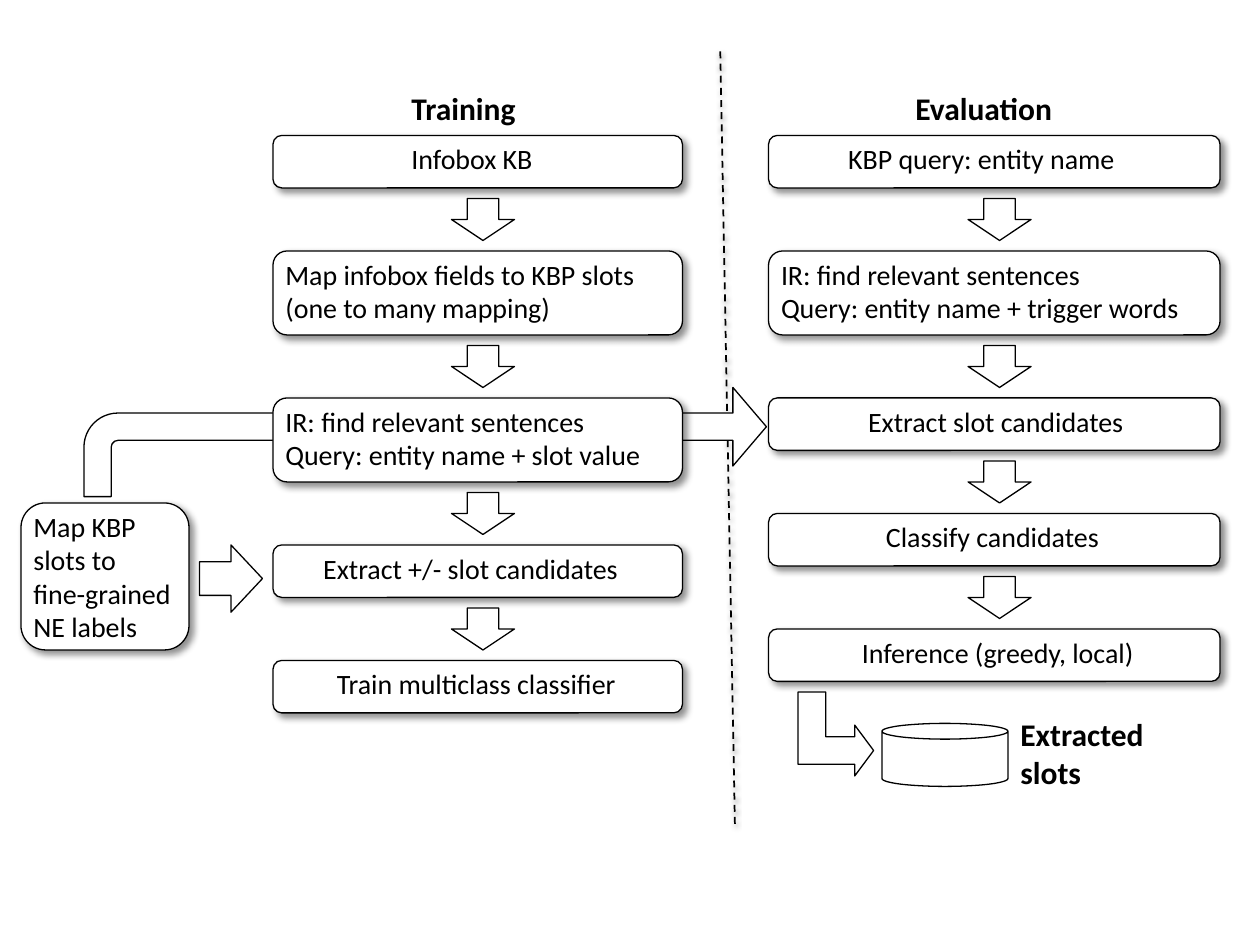
import pptx
import pptx.util
import pptx.dml.color
import pptx.enum.dml
import pptx.enum.shapes
import pptx.enum.text
import pptx.oxml
import pptx.oxml.ns

SHAPE = pptx.enum.shapes.MSO_SHAPE
WHITE = pptx.dml.color.RGBColor(0xFF, 0xFF, 0xFF)
BLACK = pptx.dml.color.RGBColor(0, 0, 0)
FONT = "Calibri"

UNITS_PER_INCH = 12
COLUMN_TOP = 12.9
HEADING_RISE = 5
ARROW_WIDTH, ARROW_HEIGHT = 6, 4
ARROW_GAP = 1
STEP_GAP = ARROW_HEIGHT + 2 * ARROW_GAP
SINGLE, DOUBLE = 5, 8

TRAINING_STEPS = [
    (["Infobox KB"], 12, 15.6),
    (["Map infobox fields to KBP slots", "(one to many mapping)"], 0, 39.5),
    (["IR: find relevant sentences", "Query: entity name + slot value"], 0, 39.6),
    (["Extract +/- slot candidates"], 3.6, 30.8),
    (["Train multiclass classifier"], 4.9, 32.3),
]
EVALUATION_STEPS = [
    (["KBP query: entity name"], 6.4, 30.7),
    (["IR: find relevant sentences", "Query: entity name + trigger words"], 0, 43.8),
    (["Extract slot candidates"], 8.3, 27),
    (["Classify candidates"], 10, 25.7),
    (["Inference (greedy, local)"], 7.7, 31.2),
]


def units(*values):
    return [pptx.util.Inches(value / UNITS_PER_INCH) for value in values]


def add_shadow(shape, opacity, blur, distance, angle):
    namespace = pptx.oxml.ns.nsdecls("a")
    effects = pptx.oxml.parse_xml(
        f'<a:effectLst {namespace}><a:outerShdw blurRad="{pptx.util.Pt(blur)}" '
        f'dist="{pptx.util.Pt(distance)}" dir="{angle * 60000}" rotWithShape="0">'
        f'<a:srgbClr val="{BLACK}"><a:alpha val="{opacity * 1000}"/></a:srgbClr>'
        "</a:outerShdw></a:effectLst>")
    shape._element.spPr.append(effects)


def add_outline(page, kind, box, adjustments=()):
    shape = page.shapes.add_shape(kind, *units(*box))
    shape.fill.solid()
    shape.fill.fore_color.rgb = WHITE
    shape.line.color.rgb = BLACK
    shape.line.width = pptx.util.Pt(0.75)
    for index, value in enumerate(adjustments):
        shape.adjustments[index] = value
    if kind == SHAPE.ROUNDED_RECTANGLE:
        add_shadow(shape, 43, 4, 3, 45)
    else:
        shape.shadow.inherit = False
    return shape


def add_label(page, left, top, width, lines, size=16, bold=False):
    height = 1.2 + len(lines) * size * 0.2
    frame = page.shapes.add_textbox(*units(left, top, width, height)).text_frame
    frame.word_wrap = False
    frame.auto_size = pptx.enum.text.MSO_AUTO_SIZE.SHAPE_TO_FIT_TEXT
    frame.text = "\n".join(lines)
    for para in frame.paragraphs:
        para.font.name = FONT
        para.font.size = pptx.util.Pt(size)
        para.font.bold = bold
        para.font.color.rgb = BLACK


def add_divider(page, start, end):
    divider = page.shapes.add_connector(
        pptx.enum.shapes.MSO_CONNECTOR.STRAIGHT, *units(*start, *end))
    divider.line.color.rgb = BLACK
    divider.line.width = pptx.util.Pt(1)
    divider.line.dash_style = pptx.enum.dml.MSO_LINE.DASH
    add_shadow(divider, 38, 3.1, 1.6, 90)


def add_step_column(page, left, width, heading, heading_indent, heading_width,
                    arrow_indent, steps):
    add_label(page, left + heading_indent, COLUMN_TOP - HEADING_RISE, heading_width,
              [heading], 18, True)
    top = COLUMN_TOP
    for number, (lines, indent, label_width) in enumerate(steps):
        if number:
            add_outline(page, SHAPE.DOWN_ARROW,
                        (left + arrow_indent, top - STEP_GAP + ARROW_GAP,
                         ARROW_WIDTH, ARROW_HEIGHT))
        height = SINGLE if len(lines) == 1 else DOUBLE
        add_outline(page, SHAPE.ROUNDED_RECTANGLE, (left, top, width, height))
        add_label(page, left + indent, top, label_width, lines)
        top += height + STEP_GAP


def add_label_mapping(page, left, top, width, height):
    add_outline(page, SHAPE.ROUNDED_RECTANGLE, (left, top, width, height))
    add_label(page, left, top, width + 0.7,
              ["Map KBP", "slots to", "fine-grained", "NE labels"])
    add_outline(page, SHAPE.RIGHT_ARROW,
                (left + width + ARROW_GAP, top + 4, ARROW_WIDTH, 6.4))


def add_result(page, left, top, width, height):
    add_outline(page, SHAPE.CAN, (left, top, width, height))
    add_label(page, left + width, top - 1.4, 16.2, ["Extracted", "slots"], 18, True)
    arrow = add_outline(page, SHAPE.BENT_UP_ARROW,
                        (left - 8.4, top - 2.6, 8, 7.2), (0.365, 0.336, 0.25))
    arrow.rotation = 90


def main():
    deck = pptx.Presentation()
    deck.slide_width = pptx.util.Inches(10)
    deck.slide_height = pptx.util.Inches(7.5)
    page = deck.slides.add_slide(deck.slide_layouts[6])

    add_divider(page, (68.6, 4.9), (70, 78.8))
    add_outline(page, SHAPE.BENT_ARROW, (8, 36.9, 65, 10.4),
                (0.25, 0.36, 0.307, 0.312))
    add_label_mapping(page, 2, 47.9, 16, 14)
    add_step_column(page, 26, 39, "Training", 12, 14.2, 17, TRAINING_STEPS)
    add_step_column(page, 73.2, 43, "Evaluation", 12.8, 17.8, 19, EVALUATION_STEPS)
    add_result(page, 84, 68.9, 12, 6)

    deck.save("out.pptx")


if __name__ == "__main__":
    main()
